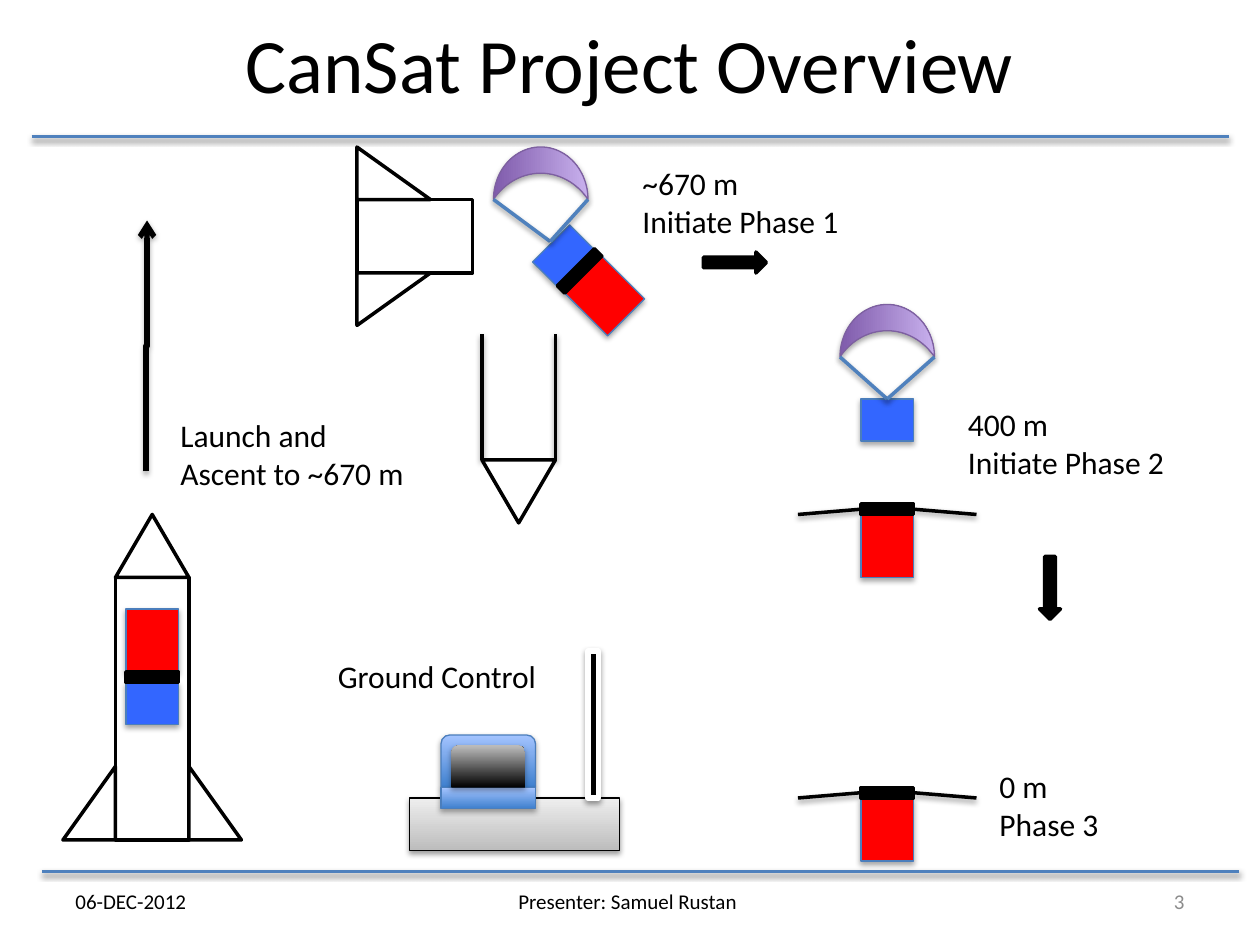
from lxml import etree
from pptx import Presentation
from pptx import util as u
from pptx.dml.color import RGBColor
from pptx.enum import shapes, text
from pptx.oxml.ns import qn

PX = 7620  # EMU; 120 px to the inch
BLACK, WHITE, RED, BLUE = "000000", "FFFFFF", "FF0000", "3366FF"
RULE, EDGE, GREY = "4F81BD", "4B7EBC", "8C8C8C"
SHELL = ("3F80CE", "A4C4FF")
SHAPE = shapes.MSO_SHAPE
ALIGN = text.PP_ALIGN


def px(*values):
    return [u.Emu(v * PX) for v in values]


def color(value):
    return RGBColor.from_string(value)


def set_shadow(sp, alpha):
    """Give the shape a soft shadow below it, or none when alpha is 0."""
    effects = etree.SubElement(sp._element.spPr, qn("a:effectLst"))
    if alpha:
        outer = etree.SubElement(effects, qn("a:outerShdw"), blurRad="40000",
                                 dist="22000", dir="5400000", rotWithShape="0")
        rgb = etree.SubElement(outer, qn("a:srgbClr"), val=BLACK)
        etree.SubElement(rgb, qn("a:alpha"), val=str(alpha * 1000))


def add_block(s, kind, box, fill, line=BLACK, width=2, shadow=0, rot=0, flip=False):
    """Add a preset shape; a pair of colours as fill is a gradient going up."""
    sp = s.shapes.add_shape(kind, *px(*box))
    sp.rotation = rot
    if flip:
        sp._element.spPr.xfrm.set("flipH", "1")
    if isinstance(fill, tuple):
        sp.fill.gradient()
        sp.fill.gradient_angle = 90
        for stop, value, position in zip(sp.fill.gradient_stops, fill, (0, 1)):
            stop.color.rgb = color(value)
            stop.position = position
    else:
        sp.fill.solid()
        sp.fill.fore_color.rgb = color(fill)
    if line:
        sp.line.color.rgb = color(line)
        sp.line.width = u.Pt(width)
    else:
        sp.line.fill.background()
    set_shadow(sp, shadow)
    return sp


def add_part(s, box, fill, kind=SHAPE.RECTANGLE, line=EDGE, rot=0):
    """Add a thin-edged part with a shadow."""
    return add_block(s, kind, box, fill, line, 0.75, 35, rot)


def add_line(s, start, end, value=BLACK, width=2,
             kind=shapes.MSO_CONNECTOR.STRAIGHT, shadow=38):
    c = s.shapes.add_connector(kind, *px(*start, *end))
    c.line.color.rgb = color(value)
    c.line.width = u.Pt(width)
    set_shadow(c, shadow)
    return c


def add_text(s, box, words, size=18, value=BLACK, align=ALIGN.LEFT,
             anchor=text.MSO_ANCHOR.TOP):
    tf = s.shapes.add_textbox(*px(*box)).text_frame
    tf.word_wrap = True
    tf.vertical_anchor = anchor
    tf.text = words
    for p in tf.paragraphs:
        p.alignment = align
        p.font.name = "Calibri"
        p.font.size = u.Pt(size)
        p.font.color.rgb = color(value)


def add_title(s, words):
    sp = s.shapes.title
    sp.left, sp.top, sp.width, sp.height = px(60, 10, 1080, 100)
    tf = sp.text_frame
    tf.text = words
    tf.vertical_anchor = text.MSO_ANCHOR.MIDDLE
    p = tf.paragraphs[0]
    p.alignment = ALIGN.CENTER
    p.font.name = "Calibri"
    p.font.size = u.Pt(44)
    p.font.color.rgb = color(BLACK)


def add_parachute(s, cx, top, knot):
    """Canopy 90 px wide, with two cords that meet at the knot."""
    add_part(s, (cx - 25, top - 20, 50, 90), ("7F5BAB", "C8B0ED"),
             SHAPE.MOON, "7D60A0", 90)
    for side in (-45, 45):
        add_line(s, (cx + side, top + 50), knot, RULE)


def add_lander(s, top):
    """Red capsule under a black hub with two rotor blades."""
    add_part(s, (820, top + 10, 50, 60), RED)
    hub = add_block(s, SHAPE.RECTANGLE, (820, top, 50, 10), BLACK)
    for root, tip, site in ((820, 760, 1), (870, 930, 3)):
        blade = add_line(s, (root, top + 5), (tip, top + 10))
        blade.begin_connect(hub, site)


def add_rocket(s):
    add_block(s, SHAPE.RECTANGLE, (110, 550, 70, 250), WHITE)
    for x, flip in ((180, False), (60, True)):
        add_block(s, SHAPE.RIGHT_TRIANGLE, (x, 730, 50, 70), WHITE, flip=flip)
    add_block(s, SHAPE.ISOSCELES_TRIANGLE, (110, 490, 70, 60), WHITE)
    add_part(s, (120, 650, 50, 40), BLUE)
    add_part(s, (120, 580, 50, 60), RED)
    add_block(s, SHAPE.RECTANGLE, (120, 640, 50, 10), BLACK)
    # Ascent arrow: an elbow turned upright
    c = add_line(s, (259, 330), (20, 329), BLACK, 3,
                 shapes.MSO_CONNECTOR.ELBOW, 35)
    c._element.spPr.xfrm.set("rot", "5400000")
    etree.SubElement(c.line._get_or_add_ln(), qn("a:tailEnd"), type="arrow")


def add_separation(s):
    # Tail section
    add_block(s, SHAPE.RECTANGLE, (360, 170, 70, 110), WHITE, rot=90)
    for y, flip in ((250, False), (130, True)):
        add_block(s, SHAPE.RIGHT_TRIANGLE, (350, y, 50, 70), WHITE, rot=90, flip=flip)
    # Nose section
    add_block(s, SHAPE.ISOSCELES_TRIANGLE, (459, 438, 70, 60), WHITE, rot=180)
    for x in (459, 529):
        add_line(s, (x, 438), (x, 318))
    # Capsule leaving under its parachute
    add_part(s, (514, 226, 50, 40), BLUE, rot=135)
    add_part(s, (550, 251, 50, 60), RED, rot=135)
    add_parachute(s, 515, 140, (524, 230))
    add_block(s, SHAPE.RECTANGLE, (527, 253, 50, 10), BLACK, rot=315)


def add_ground_control(s):
    add_block(s, SHAPE.RECTANGLE, (390, 760, 200, 50), ("BDBDBD", "EEEEEE"),
              BLACK, 0.75, 38)
    add_block(s, SHAPE.RECTANGLE, (560, 620, 10, 140), BLACK, WHITE, 3, 38)
    add_part(s, (420, 700, 90, 50), SHELL, SHAPE.ROUND_2_SAME_RECTANGLE)
    add_part(s, (420, 750, 90, 20), SHELL)
    add_part(s, (430, 710, 70, 40), (BLACK, "BDBDBD"),
             SHAPE.ROUND_2_SAME_RECTANGLE, None)


def main():
    prs = Presentation()
    prs.slide_width, prs.slide_height = px(1200, 900)
    s = prs.slides.add_slide(prs.slide_layouts[5])

    # Title, rules and footer
    add_title(s, "CanSat Project Overview")
    for x, y in ((30, 130), (40, 830)):
        add_line(s, (x, y), (x + 1140, y), RULE)
    for x, width, words, value, align in (
            (60, 280, "06-DEC-2012", BLACK, ALIGN.LEFT),
            (410, 380, "Presenter: Samuel Rustan ", BLACK, ALIGN.CENTER),
            (860, 280, "3", GREY, ALIGN.RIGHT)):
        add_text(s, (x, 834, width, 48), words, 12, value, align,
                 text.MSO_ANCHOR.MIDDLE)

    # Flight phases
    add_rocket(s)
    add_separation(s)
    add_part(s, (820, 380, 50, 40), BLUE)
    add_parachute(s, 845, 290, (845, 380))
    for top in (480, 750):
        add_lander(s, top)
    for x, y, rot in ((670, 240, 0), (970, 550, 90)):
        add_block(s, SHAPE.RIGHT_ARROW, (x, y, 60, 20), BLACK, rot=rot)
    add_ground_control(s)

    # Labels
    for x, y, width, height, words in (
            (160, 390, 300, 85, "Launch and\nAscent to ~670 m"),
            (600, 150, 220, 85, "~670 m\nInitiate Phase 1"),
            (910, 380, 220, 85, "400 m\nInitiate Phase 2"),
            (940, 725, 220, 85, "0 m\nPhase 3"),
            (310, 620, 300, 48, "Ground Control")):
        add_text(s, (x, y, width, height), words)

    prs.save("out.pptx")


if __name__ == "__main__":
    main()
